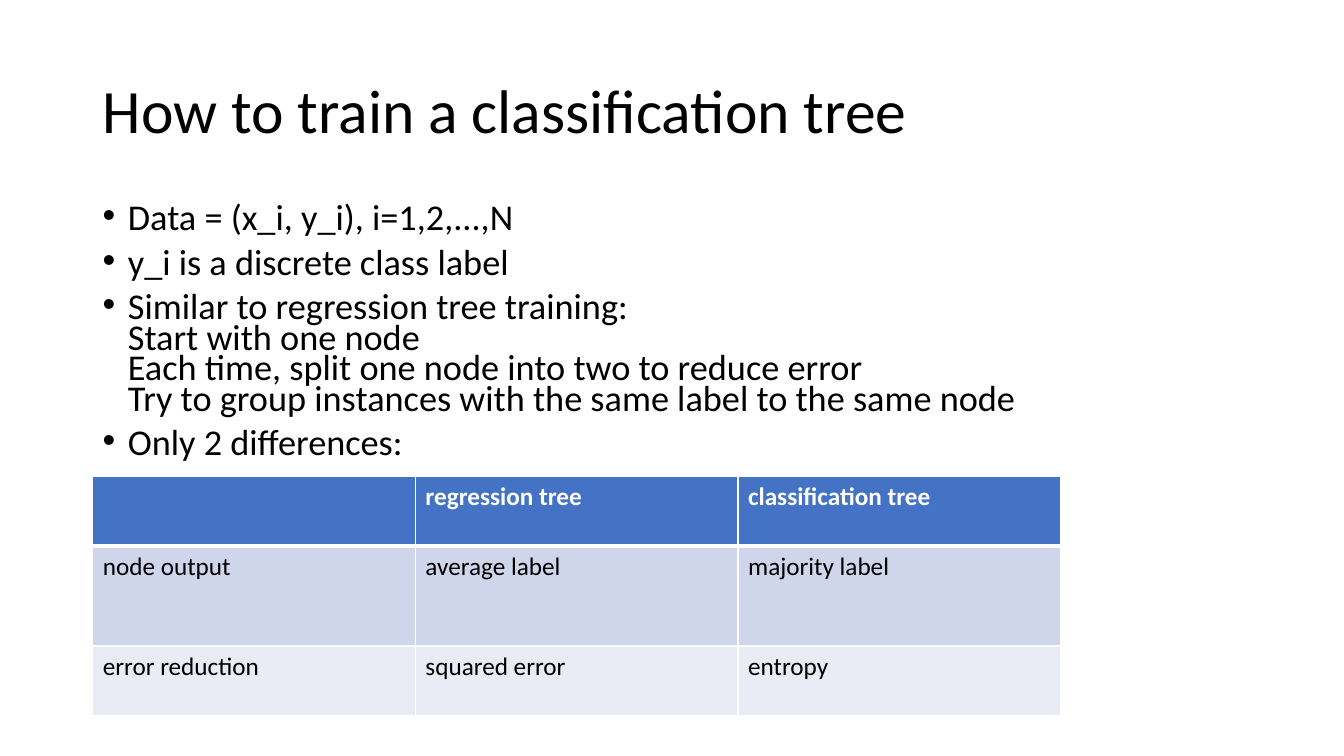
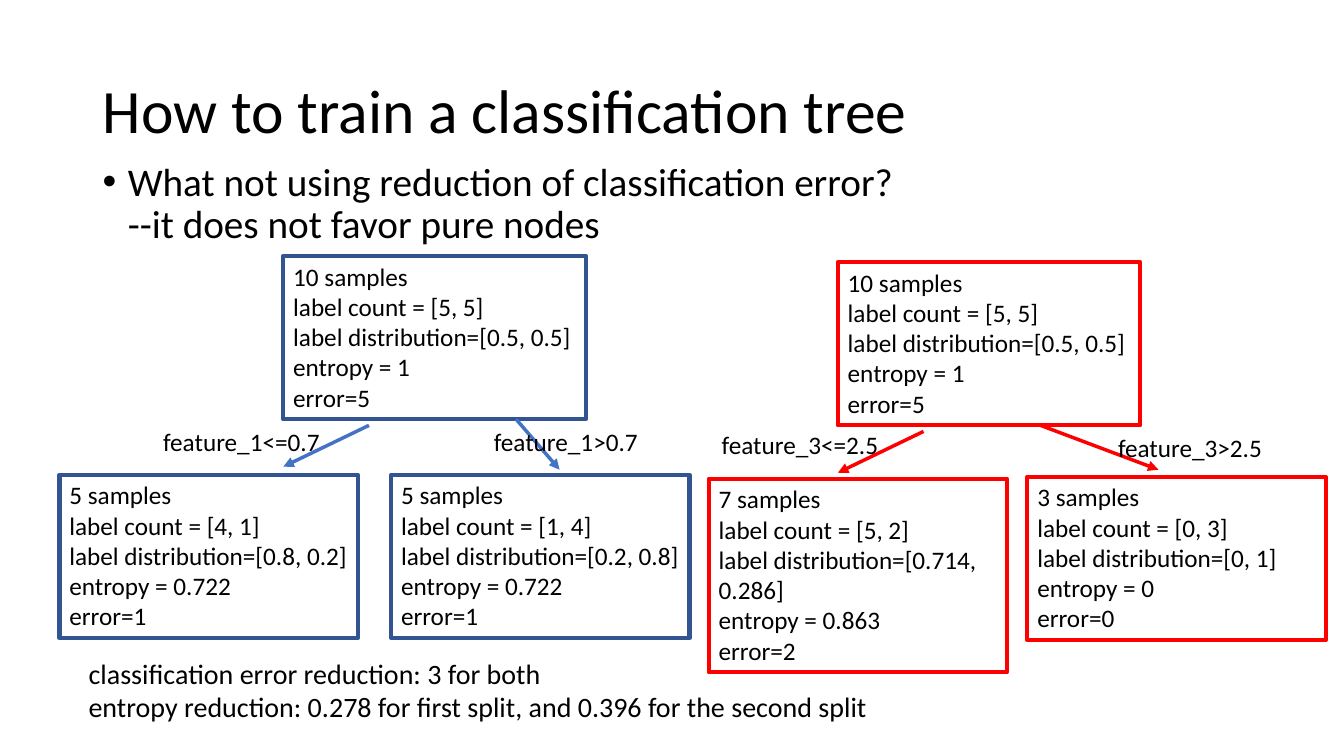
from lxml import etree
from pptx import Presentation
from pptx.dml.color import RGBColor
from pptx.enum.shapes import MSO_CONNECTOR, MSO_SHAPE
from pptx.enum.text import MSO_ANCHOR, MSO_AUTO_SIZE, PP_ALIGN
from pptx.oxml.ns import qn
from pptx.util import Inches, Pt

STRAIGHT = MSO_CONNECTOR.STRAIGHT
RECT = MSO_SHAPE.RECTANGLE
TOP, MIDDLE = MSO_ANCHOR.TOP, MSO_ANCHOR.MIDDLE
GROW = MSO_AUTO_SIZE.SHAPE_TO_FIT_TEXT
LEFT = PP_ALIGN.LEFT

FONT = "Calibri"
COLORS = {
    "text": "000000",
    "white": "FFFFFF",
    "blue": "4472C4",
    "navy": "325491",
    "red": "FF0000",
    "band1": "CFD5EA",
    "band2": "E9EBF5",
}
RGB = {name: RGBColor.from_string(value) for name, value in COLORS.items()}
TITLE = "How to train a classification tree"


def write(tf, paragraphs, size=18, color="text", bold=False, line=None,
          before=None, bullet=False, anchor=TOP, grow=False):
    tf.word_wrap = True
    tf.vertical_anchor = anchor
    if grow:
        tf.auto_size = GROW
    for i, text in enumerate(paragraphs):
        p = tf.paragraphs[0] if i == 0 else tf.add_paragraph()
        p.text = text.replace("\n", "\v")
        p.alignment = LEFT
        if line:
            p.line_spacing = line
        if before:
            p.space_before = Pt(before)
        if bullet:
            pPr = p._p.get_or_add_pPr()
            pPr.set("marL", str(Inches(0.25)))
            pPr.set("indent", str(-Inches(0.25)))
            etree.SubElement(pPr, qn("a:buFont"), typeface="Arial")
            etree.SubElement(pPr, qn("a:buChar"), char="•")
        for r in p.runs:
            r.font.name = FONT
            r.font.size = Pt(size)
            r.font.bold = bold
            r.font.color.rgb = RGB[color]


def add_text(slide, box, paragraphs, **fmt):
    sp = slide.shapes.add_textbox(*map(Inches, box))
    write(sp.text_frame, paragraphs, **fmt)


prs = Presentation()
prs.slide_width = Inches(13.33)
prs.slide_height = Inches(7.5)

bodies = [
    ((0.92, 2, 11.5, 2.74), 25.9, 0.7, [
        "Data = (x_i, y_i), i=1,2,...,N",
        "y_i is a discrete class label",
        "Similar to regression tree training:\nStart with one node\n"
        "Each time, split one node into two to reduce error\n"
        "Try to group instances with the same label to the same node",
        "Only 2 differences:",
    ]),
    ((0.92, 1.56, 11.5, 4.76), 28, 0.9, [
        "What not using reduction of classification error?\n"
        "--it does not favor pure nodes",
    ]),
]
slides = []
for box, size, line, paragraphs in bodies:
    s = prs.slides.add_slide(prs.slide_layouts[6])
    add_text(s, (0.92, 0.4, 11.5, 1.45), [TITLE], size=44, line=0.9, anchor=MIDDLE)
    add_text(s, box, paragraphs, size=size, line=line, before=10, bullet=True)
    slides.append(s)
table_slide, tree_slide = slides

rows = [
    ("", "regression tree", "classification tree"),
    ("node output", "average label", "majority label"),
    ("error reduction", "squared error", "entropy"),
]
fills = ["blue", "band1", "band2"]
heights = [0.69, 0.99, 0.69]
frame = table_slide.shapes.add_table(
    3, 3, Inches(0.92), Inches(4.73), Inches(9.6), Inches(sum(heights)))
table = frame.table
for col in table.columns:
    col.width = Inches(3.2)
for i, labels in enumerate(rows):
    table.rows[i].height = Inches(heights[i])
    header = i == 0
    for j, label in enumerate(labels):
        cell = table.cell(i, j)
        tcPr = cell._tc.get_or_add_tcPr()
        for side in ("lnL", "lnR", "lnT", "lnB"):
            thick = (i, side) in ((0, "lnB"), (1, "lnT"))
            ln = etree.SubElement(tcPr, qn("a:" + side), w=str(Pt(3 if thick else 1)))
            fill = etree.SubElement(ln, qn("a:solidFill"))
            etree.SubElement(fill, qn("a:srgbClr"), val=COLORS["white"])
        cell.fill.solid()
        cell.fill.fore_color.rgb = RGB[fills[i]]
        write(cell.text_frame, [label], color="white" if header else "text", bold=header)

nodes = [
    ((2.81, 2.54, 3, 1.62), "navy", 10, "5, 5", "0.5, 0.5", "1", 5),
    ((0.59, 4.71, 2.96, 1.62), "navy", 5, "4, 1", "0.8, 0.2", "0.722", 1),
    ((3.88, 4.71, 2.96, 1.62), "navy", 5, "1, 4", "0.2, 0.8", "0.722", 1),
    ((8.31, 2.6, 3, 1.62), "red", 10, "5, 5", "0.5, 0.5", "1", 5),
    ((7.03, 4.75, 2.96, 1.92), "red", 7, "5, 2", "0.714, 0.286", "0.863", 2),
    ((10.19, 4.73, 2.96, 1.62), "red", 3, "0, 3", "0, 1", "0", 0),
]
for box, color, samples, count, distribution, entropy, error in nodes:
    sp = tree_slide.shapes.add_shape(RECT, *map(Inches, box))
    sp.shadow.inherit = False
    sp.fill.background()
    sp.line.color.rgb = RGB[color]
    sp.line.width = Pt(3)
    write(sp.text_frame, [
        f"{samples} samples",
        f"label count = [{count}]",
        f"label distribution=[{distribution}]",
        f"entropy = {entropy}",
        f"error={error}",
    ], grow=True)

arrows = [
    ((3.66, 4.22, 2.81, 4.63), "blue"),
    ((5.12, 4.16, 5.55, 4.66), "blue"),
    ((9.16, 4.28, 8.31, 4.69), "red"),
    ((10.32, 4.22, 11.49, 4.66), "red"),
]
for ends, color in arrows:
    arrow = tree_slide.shapes.add_connector(STRAIGHT, *map(Inches, ends))
    arrow.line.color.rgb = RGB[color]
    arrow.line.width = Pt(2.5)
    etree.SubElement(arrow.line._get_or_add_ln(), qn("a:tailEnd"), type="triangle")
    etree.SubElement(arrow._element.spPr, qn("a:effectLst"))

add_text(tree_slide, (0.78, 6.46, 8.69, 1.08), [
    "classification error reduction: 3 for both",
    "entropy reduction: 0.278 for first split, and 0.396 for the second split",
], size=20, grow=True)

conditions = [
    (1.52, 4.18, "feature_1<=0.7"),
    (4.8, 4.18, "feature_1>0.7"),
    (7.06, 4.21, "feature_3<=2.5"),
    (10.99, 4.24, "feature_3>2.5"),
]
for x, y, text in conditions:
    add_text(tree_slide, (x, y, 2.01, 0.4), [text], grow=True)

prs.save("out.pptx")
